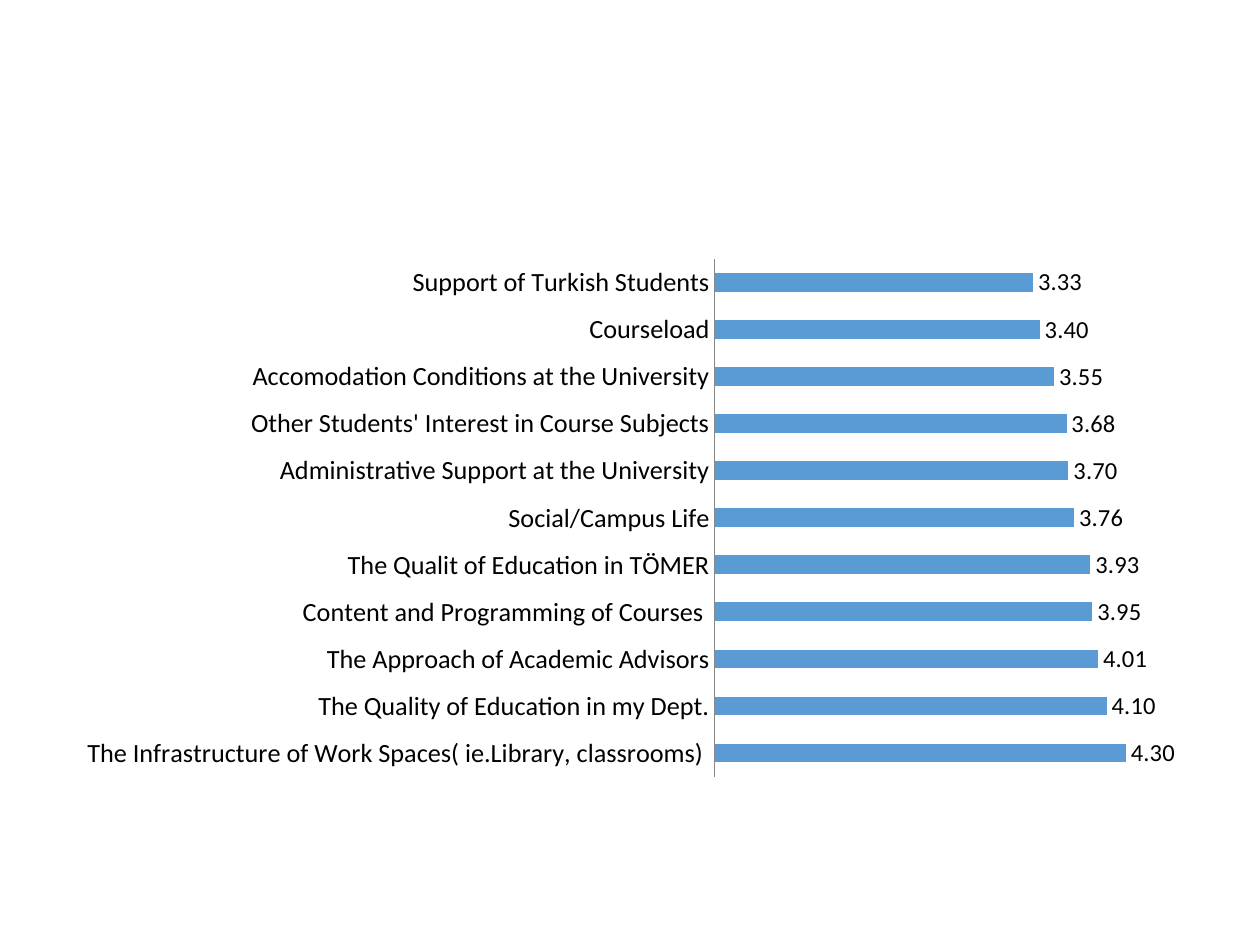
import dataclasses

import pptx
import pptx.chart.data
import pptx.dml.color
import pptx.enum.chart
import pptx.util
from pptx.util import Inches


@dataclasses.dataclass(frozen=True)
class Theme:
    """Colours, font and type sizes of the slide."""
    face: str = "Calibri"
    text: str = "000000"
    bar: str = "5B9BD5"
    axis: str = "878787"
    base_size: int = 10
    aspect_size: int = 15
    score_size: int = 14


THEME = Theme()

SATISFACTION = {
    "The Infrastructure of Work Spaces( ie.Library, classrooms) ": 4.3,
    "The Quality of Education in my Dept.": 4.1,
    "The Approach of Academic Advisors": 4.01,
    "Content and Programming of Courses ": 3.95,
    "The Qualit of Education in TÖMER": 3.93,
    "Social/Campus Life": 3.76,
    "Administrative Support at the University": 3.7,
    "Other Students' Interest in Course Subjects": 3.68,
    "Accomodation Conditions at the University": 3.55,
    "Courseload": 3.4,
    "Support of Turkish Students": 3.33,
}


def rgb(value):
    """Turn a hex string into a colour."""
    return pptx.dml.color.RGBColor.from_string(value)


def apply_format(target, values):
    """Set every attribute in values on target."""
    for name, value in values.items():
        setattr(target, name, value)


def style_font(font, size):
    """Give a font the theme's face and text colour at a size."""
    apply_format(font, {"name": THEME.face, "size": pptx.util.Pt(size)})
    font.color.rgb = rgb(THEME.text)


def style_axes(chart):
    """Show the aspect names and hide the score scale."""
    no_tick = pptx.enum.chart.XL_TICK_MARK.NONE
    aspects, scores = chart.category_axis, chart.value_axis
    apply_format(aspects, {"major_tick_mark": no_tick, "minor_tick_mark": no_tick,
                           "has_major_gridlines": False})
    apply_format(scores, {"minimum_scale": 0, "maximum_scale": 5,
                          "has_major_gridlines": False, "visible": False})
    style_font(aspects.tick_labels.font, THEME.aspect_size)
    aspects.format.line.color.rgb = rgb(THEME.axis)
    aspects.format.line.width = pptx.util.Pt(0.75)


def style_bars(plot):
    """Colour the bars and label each with its score."""
    apply_format(plot, {"gap_width": 150, "overlap": -25,
                        "vary_by_categories": False, "has_data_labels": True})
    fill = plot.series[0].format.fill
    fill.solid()
    fill.fore_color.rgb = rgb(THEME.bar)
    apply_format(plot.data_labels, {
        "show_value": True,
        "number_format": "#,##0.00",
        "number_format_is_linked": False,
        "position": pptx.enum.chart.XL_LABEL_POSITION.OUTSIDE_END,
    })
    style_font(plot.data_labels.font, THEME.score_size)


def add_score_chart(slide, scores_by_aspect):
    """Draw a bar chart of the score for each aspect."""
    data = pptx.chart.data.CategoryChartData()
    data.categories = list(scores_by_aspect)
    data.add_series("Series 1", list(scores_by_aspect.values()))
    chart = slide.shapes.add_chart(
        pptx.enum.chart.XL_CHART_TYPE.BAR_CLUSTERED,
        Inches(0.51), Inches(1.97), Inches(9.14), Inches(4.28), data).chart
    apply_format(chart, {"has_legend": False, "has_title": False})
    style_font(chart.font, THEME.base_size)
    style_axes(chart)
    style_bars(chart.plots[0])


def main():
    """Build and save the slide."""
    deck = pptx.Presentation()
    apply_format(deck, {"slide_width": Inches(10), "slide_height": Inches(7.5)})
    slide = deck.slides.add_slide(deck.slide_layouts[6])
    add_score_chart(slide, SATISFACTION)
    deck.save("out.pptx")


if __name__ == "__main__":
    main()
